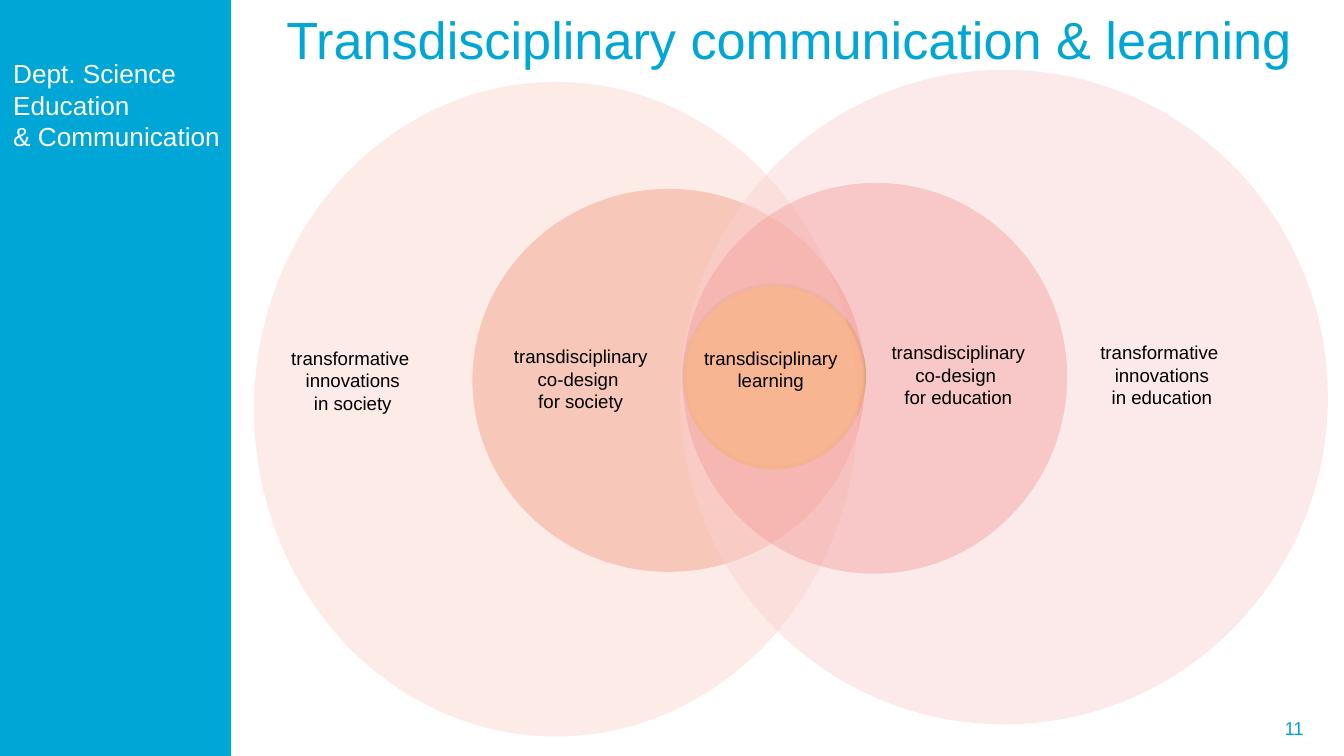
from lxml.etree import SubElement
from pptx import Presentation
from pptx.dml.color import RGBColor
from pptx.enum.shapes import MSO_SHAPE as Shape
from pptx.enum.text import MSO_ANCHOR as Anchor, MSO_AUTO_SIZE as AutoSize, PP_ALIGN as Align
from pptx.oxml.ns import qn
from pptx.util import Inches, Pt

CYAN, WHITE, BLACK, GREEN = "00A6D6", "FFFFFF", "000000", "7A9513"
TITLE = "Transdisciplinary communication & learning"
DEPARTMENT = ["Dept. Science", "Education", "& Communication"]
PAGE_NUMBER = "11"

CIRCLES = [
    ((5.09, 2.12, 1.34, 1.36), 0, None, 100),
    ((3.55, 1.37, 2.85, 2.92), 270, "F18F72", 65),
    ((1.89, 0.61, 4.49, 4.87), 0, "FADAD0", 52),
    ((5.09, 2.13, 1.34, 1.36), 9.3, "FFC000", 59),
    ((5.08, 1.36, 2.86, 2.91), 9.3, "EF7474", 45),
    ((5.06, 0.52, 4.82, 4.87), 359.8, "FAD1D1", 46),
]
LABELS = [
    ((6.53, 2.49, 1.2, 0.61), ["transdisciplinary", "co-design ", "for education"]),
    ((8.08, 2.49, 1.13, 0.61), ["transformative ", "innovations", "in education"]),
    ((3.72, 2.52, 1.2, 0.61), ["transdisciplinary", "co-design ", "for society"]),
    ((2.06, 2.53, 1.13, 0.61), ["transformative ", "innovations", "in society"]),
]
LEARNING = ((5.14, 2.53, 1.24, 0.44), ["transdisciplinary", "learning"])


def rgb(code):
    return RGBColor.from_string(code)


def write(frame, lines, size, color, align):
    frame.text = "\n".join(lines)
    for paragraph in frame.paragraphs:
        paragraph.alignment = align
        paragraph.font.name = "Arial"
        paragraph.font.size = Pt(size)
        paragraph.font.color.rgb = rgb(color)


def add_text(slide, box, lines, size, color, align, wrap=False):
    frame = slide.shapes.add_textbox(*map(Inches, box)).text_frame
    write(frame, lines, size, color, align)
    frame.word_wrap = wrap
    frame.auto_size = AutoSize.SHAPE_TO_FIT_TEXT
    return frame


def add_filled(slide, kind, box, color, opacity=100):
    shape = slide.shapes.add_shape(kind, *map(Inches, box))
    shape.shadow.inherit = False
    shape.line.fill.background()
    if color is None:
        shape.fill.background()
        return shape
    shape.fill.solid()
    shape.fill.fore_color.rgb = rgb(color)
    if opacity < 100:
        tint = shape.fill._xPr.find(f"{qn('a:solidFill')}/{qn('a:srgbClr')}")
        SubElement(tint, qn("a:alpha")).set("val", str(opacity * 1000))
    return shape


def main():
    deck = Presentation()
    deck.slide_width = Inches(10)
    deck.slide_height = deck.slide_width * 9 // 16
    slide = deck.slides.add_slide(deck.slide_layouts[5])

    title = slide.shapes.title
    title.left, title.top, title.width, title.height = map(Inches, (2.03, -0.18, 8.47, 0.94))
    write(title.text_frame, [TITLE], 28, CYAN, Align.LEFT)
    title.text_frame.vertical_anchor = Anchor.MIDDLE
    title.text_frame.auto_size = AutoSize.NONE

    add_filled(slide, Shape.RECTANGLE, (0, 0, 1.72, 5.63), CYAN)
    number = add_text(slide, (7.27, 5.27, 2.53, 0.3), [PAGE_NUMBER], 10, CYAN, Align.RIGHT, wrap=True)
    number.auto_size = AutoSize.NONE
    number.vertical_anchor = Anchor.MIDDLE

    for box, rotation, color, opacity in CIRCLES:
        circle = add_filled(slide, Shape.OVAL, box, color, opacity)
        circle.rotation = rotation
        if color is None:
            circle.line.color.rgb = rgb(GREEN)
            circle.line.width = Pt(2)

    for box, lines in LABELS:
        add_text(slide, box, lines, 10, BLACK, Align.CENTER)
    learning = add_text(slide, *LEARNING, 10, BLACK, Align.CENTER)
    learning.paragraphs[0].alignment = Align.LEFT
    add_text(slide, (0, 0.38, 1.83, 0.81), DEPARTMENT, 14, WHITE, Align.LEFT, wrap=True)

    deck.save("out.pptx")


if __name__ == "__main__":
    main()
